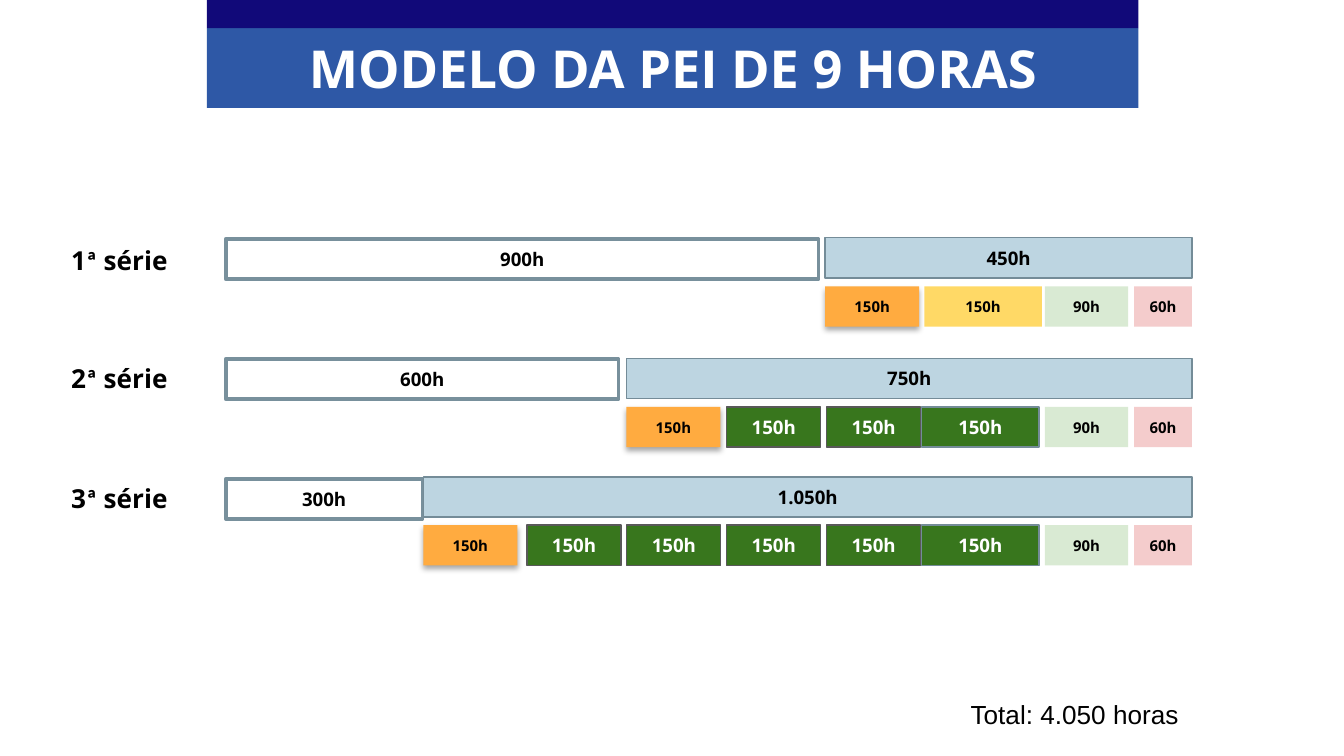
from lxml import etree
from pptx import Presentation
from pptx.dml.color import RGBColor
from pptx.enum.shapes import MSO_SHAPE
from pptx.enum.text import MSO_ANCHOR, MSO_AUTO_SIZE, PP_ALIGN
from pptx.oxml.ns import qn
from pptx.util import Pt

RECTANGLE = MSO_SHAPE.RECTANGLE
MIDDLE, TOP = MSO_ANCHOR.MIDDLE, MSO_ANCHOR.TOP
LEFT, CENTER, RIGHT = PP_ALIGN.LEFT, PP_ALIGN.CENTER, PP_ALIGN.RIGHT
GROW = MSO_AUTO_SIZE.SHAPE_TO_FIT_TEXT

COLORS = {
    "navy": "110979", "blue": "2E58A6", "white": "FFFFFF", "black": "000000",
    "slate": "78909C", "sky": "BDD5E1", "steel": "748C98", "gray": "595959",
    "orange": "FFAB40", "yellow": "FFD966", "green": "38761D",
    "mint": "D9EAD3", "pink": "F4CCCC",
}
BAR_HEIGHT = 21.6
BAR_LEFT = 121
BAR_RIGHT = 638.6
TILE_WIDTH = 50.4
TILE_PITCH = 53.5
LAST_TILE_LEFT = 442.8


def write(box, parts, size, color="black", align=CENTER, bold=True,
          anchor=TOP, margin=7.2):
    frame = box.text_frame
    frame_format = {
        "word_wrap": True, "vertical_anchor": anchor,
        "margin_left": Pt(7.2), "margin_right": Pt(7.2),
        "margin_top": Pt(margin), "margin_bottom": Pt(margin),
    }
    for name, value in frame_format.items():
        setattr(frame, name, value)
    para = frame.paragraphs[0]
    para.alignment = align
    for text, font in parts:
        span = para.add_run()
        span.text = text
        for name, value in {"name": font, "size": Pt(size), "bold": bold}.items():
            setattr(span.font, name, value)
        span.font.color.rgb = RGBColor.from_string(COLORS[color])


def add_bar(left, top, width, fill, text=None, size=10, line=None, weight=0.75,
            height=BAR_HEIGHT, color="black"):
    bar = page.shapes.add_shape(RECTANGLE, Pt(left), Pt(top), Pt(width), Pt(height))
    bar.shadow.inherit = False
    bar.fill.solid()
    bar.fill.fore_color.rgb = RGBColor.from_string(COLORS[fill])
    if line:
        bar.line.color.rgb = RGBColor.from_string(COLORS[line])
        bar.line.width = Pt(weight)
    else:
        bar.line.fill.background()
    if text:
        write(bar, [(text, "Open Sans")], size, color, anchor=MIDDLE, margin=3.6)
    return bar


deck = Presentation()
deck.slide_width = Pt(720)
deck.slide_height = Pt(405)
page = deck.slides.add_slide(deck.slide_layouts[6])

add_bar(110.9, 15.1, 499, "blue", height=42.7)
add_bar(110.9, 0, 499, "navy", height=15.1)

grades = [
    ("1", "900h", 317.5, "450h", 442.1, 123.8, 128, 127.4, 153.5, 0),
    ("2", "600h", 210.4, "750h", 335.6, 187.2, 192.3, 192, 218, 2),
    ("3", "300h", 105.3, "1.050h", 226.8, 251.3, 256.5, 255.5, 281.3, 4),
]
for (number, common, common_width, path_hours, path_left,
     label_top, common_top, path_top, tile_top, green_count) in grades:
    label = page.shapes.add_textbox(Pt(31), Pt(label_top), Pt(77), Pt(31.7))
    write(label, [(number, "Open Sans"), ("ª", "Calibri"), (" série", "Open Sans")],
          14, align=LEFT)
    label.text_frame.auto_size = GROW

    add_bar(BAR_LEFT, common_top, common_width, "white", common,
            line="slate", weight=2)
    add_bar(path_left, path_top, BAR_RIGHT - path_left, "sky", path_hours,
            line="steel")

    if green_count:
        add_bar(493.7, tile_top, 62.9, "green", "150h", line="steel", color="white")
    else:
        add_bar(495.2, tile_top, 62.9, "yellow", "150h", 8)
    add_bar(559.8, tile_top, 44.6, "mint", "90h", 8)
    add_bar(607.6, tile_top, 31, "pink", "60h", 8)

    orange = add_bar(path_left, tile_top, TILE_WIDTH, "orange", "150h", 8)
    effects = orange._element.spPr.find(qn("a:effectLst"))
    shadow = etree.SubElement(effects, qn("a:outerShdw"), blurRad=str(Pt(3.1)),
                              dist=str(Pt(1.8)), dir="5400000", rotWithShape="0")
    shade = etree.SubElement(shadow, qn("a:srgbClr"), val=COLORS["black"])
    etree.SubElement(shade, qn("a:alpha"), val="35000")

    for step in range(green_count):
        add_bar(LAST_TILE_LEFT - step * TILE_PITCH, tile_top, TILE_WIDTH, "green",
                "150h", line="gray", color="white")

title = page.shapes.add_textbox(Pt(110.9), Pt(15.8), Pt(499), Pt(41))
write(title, [("MODELO DA PEI DE 9 HORAS", "Open Sans")], 28, "white", margin=3.6)
title.text_frame.auto_size = GROW

total = page.shapes.add_textbox(Pt(113.8), Pt(367.2), Pt(524.8), Pt(31.7))
write(total, [("Total: 4.050 horas", "Arial")], 14, align=RIGHT, bold=False)
total.text_frame.auto_size = GROW

deck.save("out.pptx")
